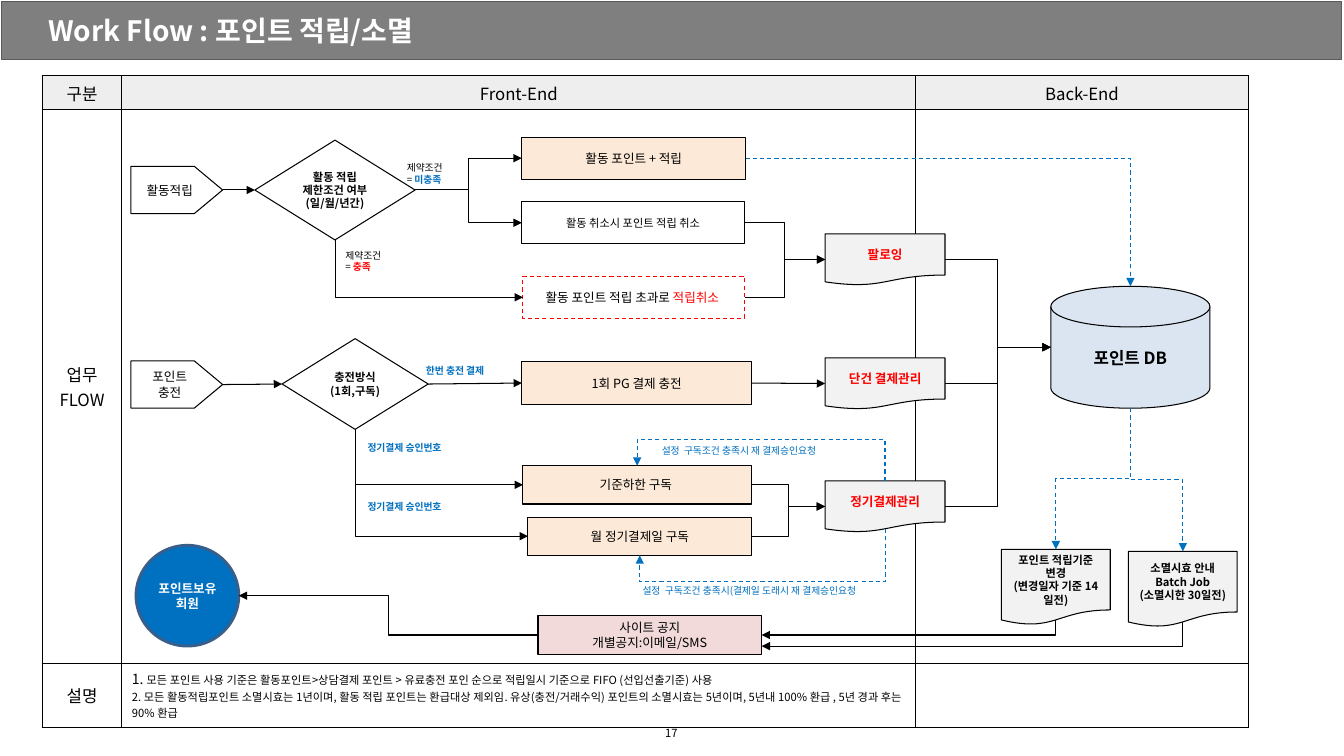
from pptx import Presentation
from pptx import util as u
from pptx.dml.color import RGBColor
from pptx.enum import dml, shapes, text
from pptx.oxml import parse_xml
from pptx.oxml.ns import nsdecls, qn

FONT = "Noto Sans CJK KR"
GRID = 0.1  # inches per grid column and row
C = {"black": "000000", "white": "FFFFFF", "red": "FF0000", "blue": "0070C0",
     "bar": "7F7F7F", "bar_line": "595959", "head": "EEEEEE", "peach": "FDE9D8",
     "pink": "F2DADA", "doc": "F2F2F2", "db": "DAE5F1", "navy": "395E89"}
K = shapes.MSO_SHAPE
TOP, LEFT, BOTTOM, RIGHT = range(4)


def rgb(name):
    return RGBColor.from_string(C[name])


def place(box, cell):
    """Turn grid columns and rows inside a box into slide lengths."""
    c, r, w, h = cell
    return [u.Inches(v) for v in (box[0] + c * GRID, box[1] + r * GRID, w * GRID, h * GRID)]


def write(tf, paras, size, color="black", bold=False, align="CENTER", font=FONT, anchor="MIDDLE"):
    """Each paragraph is a string or a list of (text, colour, bold, size) runs."""
    tf.word_wrap = True
    tf.vertical_anchor = text.MSO_ANCHOR[anchor]
    for i, para in enumerate(paras):
        p = tf.paragraphs[0] if i == 0 else tf.add_paragraph()
        p.alignment = text.PP_ALIGN[align]
        runs = [(para, color, bold, size)] if isinstance(para, str) else para
        for words, run_color, run_bold, run_size in runs:
            r = p.add_run()
            r.text = words
            r.font.name, r.font.size, r.font.bold = font, u.Pt(run_size), run_bold
            r.font.color.rgb = rgb(run_color)
            r.font._element.append(parse_xml(f'<a:ea {nsdecls("a")} typeface="{FONT}"/>'))


def node(s, box, cell, kind, paras, fill=None, line="black", width=0.75, dash=False,
         size=9, inset=0.1, **style):
    sp = s.shapes.add_shape(kind, *place(box, cell))
    sp.shadow.inherit = False
    if fill:
        sp.fill.solid()
        sp.fill.fore_color.rgb = rgb(fill)
    else:
        sp.fill.background()
    sp.line.color.rgb = rgb(line)
    sp.line.width = u.Pt(width)
    if dash:
        sp.line.dash_style = dml.MSO_LINE.DASH
    if kind == K.PENTAGON:
        sp.adjustments[0] = 0.6
    tf = sp.text_frame
    tf.margin_left = tf.margin_right = u.Inches(inset)
    write(tf, paras, size, **style)
    return sp


def label(s, box, cell, paras, size=7, color="blue", bold=True, align="LEFT"):
    tb = s.shapes.add_textbox(*place(box, cell))
    write(tb.text_frame, paras, size, color, bold, align)


def document(s, box, cell, paras, size=9, color="red"):
    return node(s, box, cell, K.FLOWCHART_DOCUMENT, paras, "doc", size=size, color=color, bold=True)


def side(sp, i):
    """Middle of a side; the wavy foot of a document lies a little higher."""
    foot = 0.94 if sp.auto_shape_type == K.FLOWCHART_DOCUMENT else 1
    fx, fy = ((0.5, 0), (0, 0.5), (0.5, foot), (1, 0.5))[i]
    return int(sp.left + sp.width * fx), int(sp.top + sp.height * fy)


def finish(c, color, dash):
    c.line.color.rgb = rgb(color)
    c.line.width = u.Pt(0.75)
    if dash:
        c.line.dash_style = dml.MSO_LINE.DASH
    c.line._get_or_add_ln().append(parse_xml(f'<a:tailEnd {nsdecls("a")} type="triangle"/>'))
    c._element.spPr.append(parse_xml(f'<a:effectLst {nsdecls("a")}/>'))


def arrow(s, a, b):
    c = s.shapes.add_connector(shapes.MSO_CONNECTOR.STRAIGHT, 0, 0, 0, 0)
    c.begin_connect(a, RIGHT)
    c.end_connect(b, LEFT)
    finish(c, "black", False)


def elbow(s, start, end, route="HH", color="black", dash=False, bend=0.5):
    """Route gives the first and last direction, H or V; V starts turn the connector."""
    (x1, y1), (x2, y2) = start, end
    turn = 0
    if route[0] == "V":
        turn = 90 if x2 < x1 else 270
        cx, cy = (x1 + x2) // 2, (y1 + y2) // 2
        half_w = (y2 - y1) // 2 * (1 if turn == 90 else -1)
        half_h = abs(x2 - x1) // 2
        x1, x2, y1, y2 = cx - half_w, cx + half_w, cy - half_h, cy + half_h
    c = s.shapes.add_connector(shapes.MSO_CONNECTOR.ELBOW, x1, y1, x2, y2)
    spPr = c._element.spPr
    geom = spPr.find(qn("a:prstGeom"))
    if turn:
        spPr.find(qn("a:xfrm")).set("rot", str(turn * 60000))
    if route[0] != route[1]:
        geom.set("prst", "bentConnector2")
    else:
        guide = f'<a:gd {nsdecls("a")} name="adj1" fmla="val {round(bend * 100000)}"/>'
        geom.get_or_add_avLst().append(parse_xml(guide))
    finish(c, color, dash)


def title_bar(s, box):
    x, y, w, h = box
    node(s, (x + 0.02, y + 0.02), (0, 0, w * 10 - 0.4, h * 10 - 0.3), K.RECTANGLE, [],
         "bar", "bar_line")
    label(s, box, (3.8, 0, w * 10 - 6, h * 10), ["Work Flow : 포인트 적립/소멸"], 20, "white")


def frame_table(s, box):
    cols, rows = (0.79, 7.88, 3.3), (0.34, 5.49, 0.64)
    tbl = s.shapes.add_table(3, 3, *[u.Inches(v) for v in box]).table
    tbl.first_row = tbl.horz_banding = False
    for col, w in zip(tbl.columns, cols):
        col.width = u.Inches(w)
    for row, h in zip(tbl.rows, rows):
        row.height = u.Inches(h)
    notes = [[("1. ", "black", False, 10),
              ("모든 포인트 사용 기준은 활동포인트>상담결제 포인트 > 유료충전 포인 순으로 "
               "적립일시 기준으로 FIFO (선입선출기준) 사용", "black", False, 8)],
             "2. 모든 활동적립포인트 소멸시효는 1년이며, 활동 적립 포인트는 환급대상 제외임. "
             "유상(충전/거래수익) 포인트의 소멸시효는 5년이며, 5년내 100% 환급 , 5년 경과 후는 90% 환급"]
    words = [[["구분"], ["Front-End"], ["Back-End"]],
             [["업무", "FLOW"], [], []], [["설명"], notes, []]]
    for i, row in enumerate(words):
        for j, paras in enumerate(row):
            cell = tbl.cell(i, j)
            for edge in "LRTB":
                cell._tc.get_or_add_tcPr().append(parse_xml(
                    f'<a:ln{edge} {nsdecls("a")} w="12700"><a:solidFill>'
                    f'<a:srgbClr val="{C["black"]}"/></a:solidFill></a:ln{edge}>'))
            if i == 0:
                cell.fill.solid()
                cell.fill.fore_color.rgb = rgb("head")
            else:
                cell.fill.background()
            if paras is notes:
                write(cell.text_frame, paras, 8, align="LEFT", anchor="TOP")
            else:
                write(cell.text_frame, paras, 12)
                cell.vertical_anchor = text.MSO_ANCHOR.MIDDLE


def earning_lane(s, box):
    tag = node(s, box, (1, 5.5, 9.1, 4.7), K.PENTAGON, ["활동적립"], font="Arial")
    limit = node(s, box, (13.3, 2.9, 15.9, 9.9), K.FLOWCHART_DECISION,
                 ["활동 적립", "제한조건 여부", "(일/월/년간)"], "white", size=8, inset=0.04, bold=True)
    add = node(s, box, (39.8, 2.6, 22.2, 4.2), K.FLOWCHART_PROCESS, ["활동 포인트 + 적립"], "peach")
    cancel = node(s, box, (39.8, 9, 22.1, 4.2), K.FLOWCHART_PROCESS,
                  ["활동 취소시 포인트 적립 취소"], size=8)
    over = node(s, box, (39.9, 16.4, 22, 4.2), K.FLOWCHART_PROCESS,
                [[("활동 포인트 적립 초과로 ", "black", False, 9), ("적립취소 ", "red", False, 9)]],
                line="red", dash=True)
    follow = document(s, box, (69.9, 12.2, 11.9, 5.1), ["팔로잉"])
    for c, r, result, color in ((27.4, 4.5, "미충족", "blue"), (21.3, 13.2, "충족", "red")):
        label(s, box, (c, r, 6.4, 3.4),
              ["제약조건", [("= ", "black", False, 7), (result, color, True, 7)]], 7, "black", False)
    arrow(s, tag, limit)
    for target in (add, cancel):
        elbow(s, side(limit, RIGHT), side(target, LEFT))
    elbow(s, side(limit, BOTTOM), side(over, LEFT), "VH")
    for origin in (cancel, over):
        elbow(s, side(origin, RIGHT), side(follow, LEFT))
    return add, follow


def charging_lane(s, box):
    tag = node(s, box, (1, 2.8, 9.1, 4.7), K.PENTAGON, ["포인트 충전"], font="Arial")
    method = node(s, box, (16, 0.6, 14.5, 9), K.FLOWCHART_DECISION,
                  ["충전방식", "(1회,구독)"], "white", size=8, inset=0.04, bold=True)
    once, base, monthly = [
        node(s, box, cell, K.FLOWCHART_PROCESS, [words], "peach") for cell, words in (
            ((39.8, 2.9, 22.8, 4.2), "1회 PG 결제 충전"),
            ((39.9, 13.2, 22.7, 3.8), "기준하한 구독 "),
            ((40.4, 18.3, 22.2, 3.8), "월 정기결제일 구독"))]
    single = document(s, box, (69.9, 2.5, 11.9, 5.1), ["단건 결제관리"])
    regular = document(s, box, (69.9, 14.7, 11.9, 5.1), ["정기결제관리"])
    label(s, box, (29.3, 2.7, 8.7, 2.2), ["한번 충전 결제"])
    for r in (10.3, 16.2):
        label(s, box, (23.5, r, 11.7, 2.2), ["정기결제 승인번호"])
    label(s, box, (52.7, 10.6, 23.1, 2.2), ["설정  구독조건 충족시 재 결제승인요청"], bold=False)
    label(s, box, (50.8, 24.5, 28, 2.2),
          ["설정  구독조건 충족시(결제일 도래시 재 결제승인요청"], bold=False)
    for a, b in ((tag, method), (method, once), (once, single)):
        arrow(s, a, b)
    for plan, edge, bend in ((base, TOP, 2.75), (monthly, BOTTOM, 2.01)):
        elbow(s, side(method, BOTTOM), side(plan, LEFT), "VH")
        elbow(s, side(plan, RIGHT), side(regular, LEFT))
        elbow(s, side(regular, edge), side(plan, edge), "VV", "blue", True, bend)
    return single, regular


def notice_lane(s, box):
    member = node(s, box, (1.5, 0.1, 10.2, 10), K.OVAL, ["포인트보유 회원"], "blue", "navy", 2,
                  inset=0.04, color="white", bold=True)
    notice = node(s, box, (41.4, 7.1, 22.2, 3.8), K.FLOWCHART_PROCESS,
                  ["사이트 공지", "개별공지:이메일/SMS"], "pink")
    elbow(s, side(notice, LEFT), side(member, RIGHT))
    return notice


def back_end(s, box, add, documents, notice):
    db = node(s, box, (13.3, 17.4, 15.8, 12.1), K.FLOWCHART_MAGNETIC_DISK, ["포인트 DB"], "db",
              size=12, bold=True)
    change = document(s, box, (8.4, 43.5, 10.8, 7.5),
                      ["포인트 적립기준 변경", "(변경일자 기준 14일전)"], 8, "black")
    batch = document(s, box, (21, 43.7, 10.8, 7.5),
                     ["소멸시효 안내 Batch Job", "(소멸시한 30일전)"], 8, "black")
    elbow(s, side(add, RIGHT), side(db, TOP), "HV", "blue", True)
    for doc in documents:
        elbow(s, side(doc, RIGHT), side(db, LEFT))
    x, y = side(notice, RIGHT)
    for i, job in enumerate((change, batch)):
        elbow(s, side(db, BOTTOM), side(job, TOP), "VV", "blue", True)
        elbow(s, side(job, BOTTOM), (x, y + i * u.Inches(0.11)), "VH")


def main():
    prs = Presentation()
    prs.slide_width, prs.slide_height = u.Inches(13.34), u.Inches(7.5)
    s = prs.slides.add_slide(prs.slide_layouts[6])
    title_bar(s, (0, 0, 13.34, 0.6))
    frame_table(s, (0.42, 0.75, 11.97, 6.47))
    label(s, (0, 7.08), (0, 0, 133.3, 3.9), ["17"], 8, "black", False, "CENTER")
    add, follow = earning_lane(s, (1.2, 1.1))
    single, regular = charging_lane(s, (1.2, 3.3))
    notice = notice_lane(s, (1.2, 5.4))
    back_end(s, (9.1, 1.1), add, (follow, single, regular), notice)
    prs.save("out.pptx")


if __name__ == "__main__":
    main()
